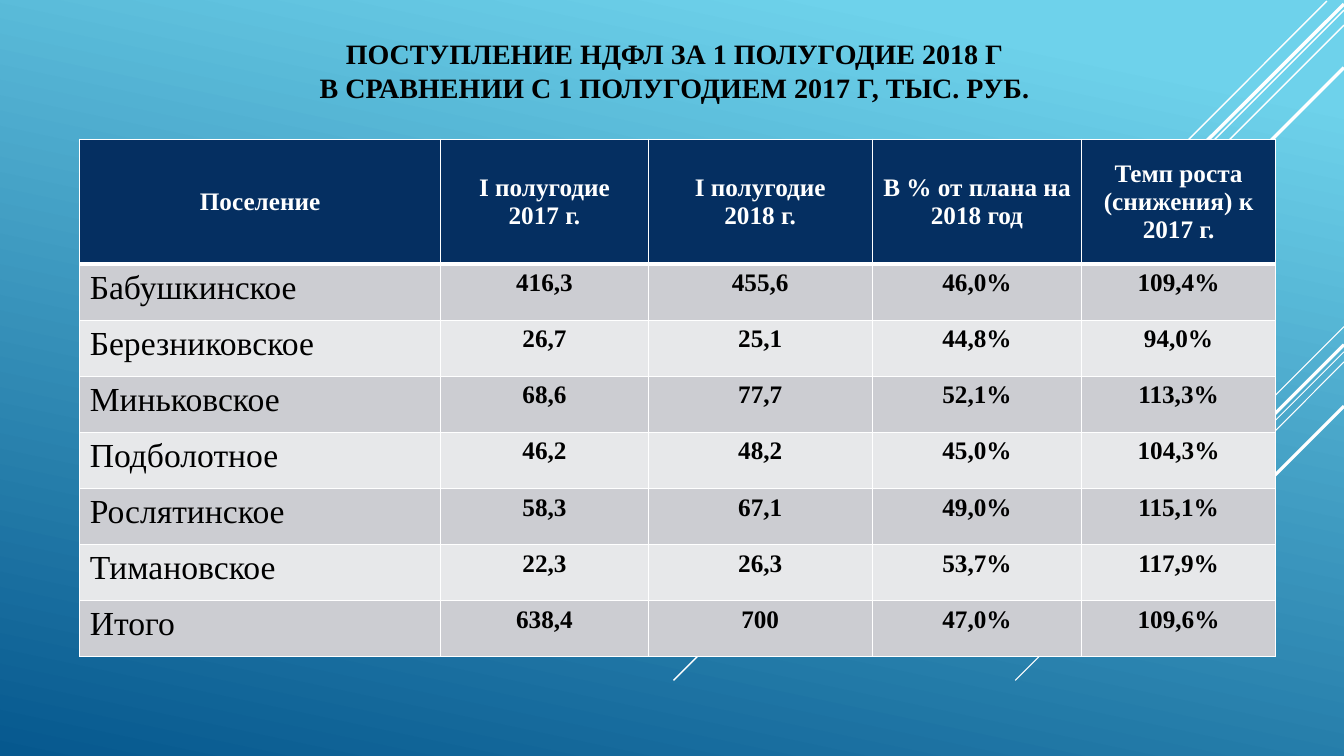
import pptx
import pptx.dml.color
import pptx.enum.shapes
import pptx.enum.text
import pptx.oxml
import pptx.oxml.ns
import pptx.util
from lxml import etree

Inches = pptx.util.Inches
Pt = pptx.util.Pt
ALIGN = pptx.enum.text.PP_ALIGN
ANCHOR = pptx.enum.text.MSO_ANCHOR

# Start x, start y, end x, end y, width in points
STREAKS = [
    (13.33, 3.24, 12.33, 4.24, 0.75),
    (13.33, 3.49, 10.07, 6.75, 0.75),
    (13.33, 3.59, 11.26, 5.67, 0.75),
    (13.33, 3.42, 11.42, 5.33, 2.25),
    (13.33, 4.03, 11.94, 5.42, 2.25),
    (13.16, 0.01, 9, 4.18, 1),
    (13.33, 0.1, 6.68, 6.75, 1),
    (13.33, 0.25, 7.91, 5.67, 1),
    (13.33, 0.04, 8.02, 5.34, 2.5),
    (13.33, 0.67, 8.58, 5.42, 2.5),
]
TITLE = "ПОСТУПЛЕНИЕ НДФЛ ЗА 1 ПОЛУГОДИЕ 2018 Г\nВ СРАВНЕНИИ С 1 ПОЛУГОДИЕМ 2017 Г, ТЫС. РУБ."
INCOME = [
    ["Поселение", "I полугодие\n2017 г.", "I полугодие\n2018 г.",
     "В % от плана на 2018 год", "Темп роста (снижения) к 2017 г."],
    ["Бабушкинское", "416,3", "455,6", "46,0%", "109,4%"],
    ["Березниковское", "26,7", "25,1", "44,8%", "94,0%"],
    ["Миньковское", "68,6", "77,7", "52,1%", "113,3%"],
    ["Подболотное", "46,2", "48,2", "45,0%", "104,3%"],
    ["Рослятинское", "58,3", "67,1", "49,0%", "115,1%"],
    ["Тимановское", "22,3", "26,3", "53,7%", "117,9%"],
    ["Итого", "638,4", "700", "47,0%", "109,6%"],
]
COLUMN_WIDTHS = [3.58, 2.06, 2.22, 2.08, 1.92]


def color(value):
    return pptx.dml.color.RGBColor.from_string(value)


class Painter:
    """Holds the style and the page being drawn."""
    font = "Times New Roman"
    white, black, navy = "FFFFFF", "000000", "052F61"
    bands = ["E7E8EA", "CCCDD2"]

    def __init__(self, page):
        self.page = page

    def background(self, stops, angle):
        """Fill the page with a gradient; angle is counter-clockwise."""
        fill = self.page.background.fill
        fill.gradient()
        fill.gradient_angle = angle
        for stop, (position, value) in zip(fill.gradient_stops, stops):
            stop.position = position
            stop.color.rgb = color(value)

    def line(self, x1, y1, x2, y2, width):
        line = self.page.shapes.add_connector(
            pptx.enum.shapes.MSO_CONNECTOR.STRAIGHT,
            Inches(x1), Inches(y1), Inches(x2), Inches(y2))
        line.line.color.rgb = color(self.white)
        line.line.width = Pt(width)
        etree.SubElement(line._element.spPr, pptx.oxml.ns.qn("a:effectLst"))

    def style(self, para, size, value, bold=True, align=ALIGN.CENTER):
        para.alignment = align
        para.font.name = self.font
        para.font.size = Pt(size)
        para.font.bold = bold
        para.font.color.rgb = color(value)

    def title(self, text, left, top, width, height):
        box = self.page.shapes.add_textbox(
            Inches(left), Inches(top), Inches(width), Inches(height))
        frame = box.text_frame
        frame.word_wrap = True
        frame.vertical_anchor = ANCHOR.BOTTOM
        para = frame.paragraphs[0]
        para.text = text
        self.style(para, 20, self.black)

    def borders(self, cell, top, bottom):
        widths = {"lnL": 1, "lnR": 1, "lnT": top, "lnB": bottom}
        for side, width in widths.items():
            cell._tc.get_or_add_tcPr().append(pptx.oxml.parse_xml(
                f'<a:{side} {pptx.oxml.ns.nsdecls("a")} w="{Pt(width)}"><a:solidFill>'
                f'<a:srgbClr val="{self.white}"/></a:solidFill></a:{side}>'))

    def cell(self, cell, text, row, column):
        self.borders(cell, 3 if row == 1 else 1, 3 if row == 0 else 1)
        cell.fill.solid()
        cell.fill.fore_color.rgb = color(self.bands[row % 2] if row else self.navy)
        cell.vertical_anchor = ANCHOR.TOP if row else ANCHOR.MIDDLE
        cell.text_frame.text = text
        for para in cell.text_frame.paragraphs:
            if row and column == 0:
                self.style(para, 24, self.black, False, ALIGN.LEFT)
            else:
                self.style(para, 18, self.black if row else self.white)

    def table(self, rows, left, top, widths, header_height, row_height):
        height = header_height + row_height * (len(rows) - 1)
        table = self.page.shapes.add_table(
            len(rows), len(widths), Inches(left), Inches(top),
            Inches(sum(widths)), Inches(height)).table
        for column, width in zip(table.columns, widths):
            column.width = Inches(width)
        for r, texts in enumerate(rows):
            table.rows[r].height = Inches(row_height if r else header_height)
            for c, text in enumerate(texts):
                self.cell(table.cell(r, c), text, r, c)


def main():
    deck = pptx.Presentation()
    deck.slide_width = Inches(13.33)
    deck.slide_height = Inches(7.5)
    painter = Painter(deck.slides.add_slide(deck.slide_layouts[6]))
    painter.background([(0.1, "6ED2EB"), (1, "06588E")], 258)
    for streak in STREAKS:
        painter.line(*streak)
    painter.title(TITLE, 1.69, 0.35, 10, 0.73)
    painter.table(INCOME, 0.79, 1.38, COLUMN_WIDTHS, 1.24, 0.557)
    deck.save("out.pptx")


if __name__ == "__main__":
    main()
